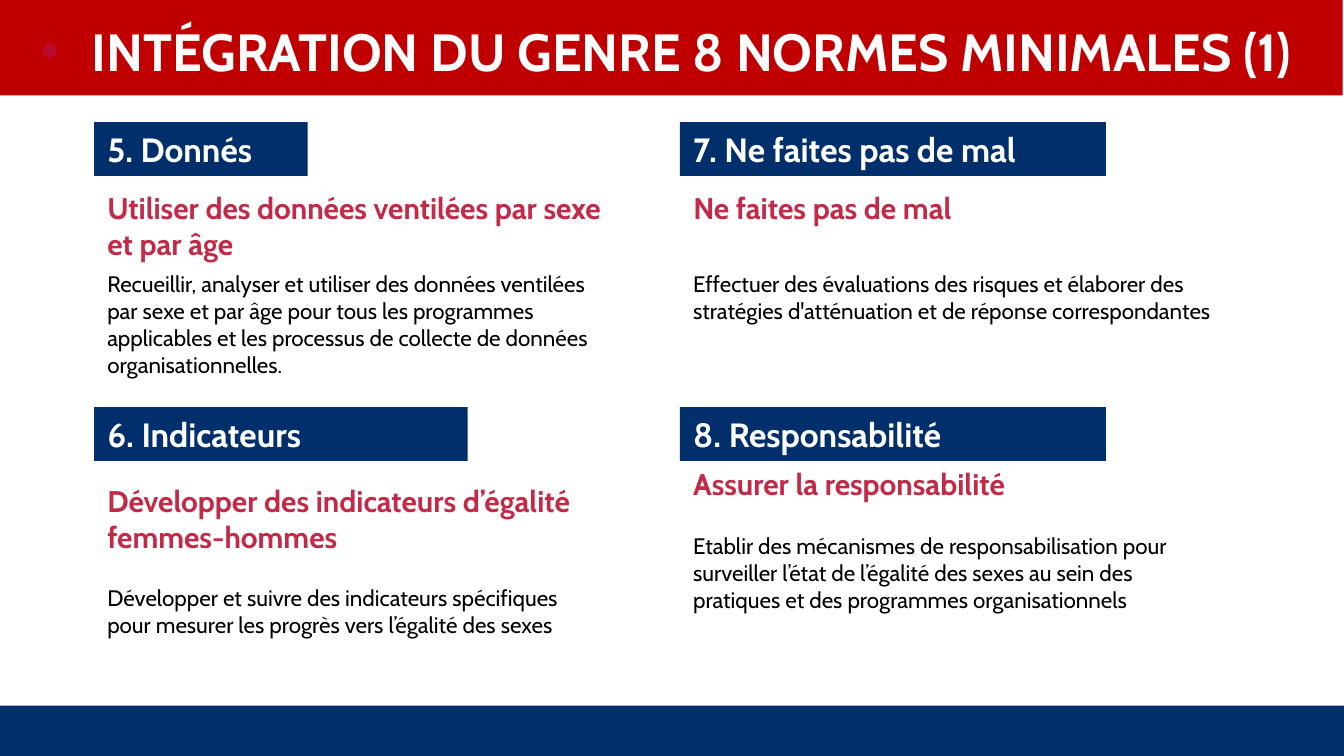
import pptx
import pptx.util
import pptx.dml.color
import pptx.enum.shapes
import pptx.enum.text
import pptx.oxml.ns
from lxml import etree

Inches = pptx.util.Inches
ANCHOR = pptx.enum.text.MSO_ANCHOR
AUTO_SIZE = pptx.enum.text.MSO_AUTO_SIZE

COLORS = {"navy": "002F6C", "red": "C00000", "bullet": "BA0C2F",
          "heading": "C22A48", "white": "FFFFFF", "black": "000000"}

FORMATS = {
    "title": ({"size": 28, "bold": True}, "white"),
    "label": ({"size": 18, "bold": True}, "white"),
    "heading": ({"size": 16, "bold": True}, "heading"),
    "body": ({"size": 12, "bold": False}, "black"),
}

LEFT, RIGHT = 0.7, 5.06
TOP, BOTTOM = 0.91, 3.03
LABEL_HEIGHT = 0.4

# Each box is (offset below the norm's top, width, height).
NORMS = [
    {"at": (LEFT, TOP), "label": "5. Donnés", "label_width": 1.59,
     "heading": "Utiliser des données ventilées par sexe et par âge",
     "heading_box": (0.45, 3.95, 0.64),
     "body": "Recueillir, analyser et utiliser des données ventilées par sexe et par âge "
             "pour tous les programmes applicables et les processus de collecte de données "
             "organisationnelles.",
     "body_box": (1.05, 3.84, 0.91)},
    {"at": (LEFT, BOTTOM), "label": "6. Indicateurs", "label_width": 2.78,
     "heading": "Développer des indicateurs d’égalité femmes-hommes",
     "heading_box": (0.51, 3.75, 0.64),
     "body": "Développer et suivre des indicateurs spécifiques pour mesurer les progrès "
             "vers l’égalité des sexes",
     "body_box": (1.27, 3.84, 0.5)},
    {"at": (RIGHT, TOP), "label": "7. Ne faites pas de mal", "label_width": 3.17,
     "heading": "Ne faites pas de mal",
     "heading_box": (0.45, 3.75, 0.37),
     "body": "Effectuer des évaluations des risques et élaborer des stratégies "
             "d'atténuation et de réponse correspondantes",
     "body_box": (1.05, 4.24, 0.5)},
    {"at": (RIGHT, BOTTOM), "label": "8. Responsabilité", "label_width": 3.17,
     "heading": "Assurer la responsabilité",
     "heading_box": (0.38, 2.7, 0.37),
     "body": "Etablir des mécanismes de responsabilisation pour surveiller l’état de "
             "l’égalité des sexes au sein des pratiques et des programmes organisationnels",
     "body_box": (0.88, 4.03, 0.71)},
]


def set_fill(shape, color):
    shape.fill.solid()
    shape.fill.fore_color.rgb = pptx.dml.color.RGBColor.from_string(COLORS[color])


def add_bar(slide, box, color):
    bar = slide.shapes.add_shape(pptx.enum.shapes.MSO_SHAPE.RECTANGLE, *map(Inches, box))
    bar.shadow.inherit = False
    bar.line.fill.background()
    set_fill(bar, color)
    return bar


def write_text(shape, text, style, anchor=ANCHOR.TOP,
               align=pptx.enum.text.PP_ALIGN.LEFT, auto_size=AUTO_SIZE.SHAPE_TO_FIT_TEXT):
    frame = shape.text_frame
    frame_format = {"word_wrap": True, "auto_size": auto_size, "vertical_anchor": anchor}
    for name, value in frame_format.items():
        setattr(frame, name, value)
    paragraph = frame.paragraphs[0]
    paragraph.alignment = align
    run = paragraph.add_run()
    run.text = text
    values, color = FORMATS[style]
    font_format = {**values, "name": "Cabin", "size": pptx.util.Pt(values["size"])}
    for name, value in font_format.items():
        setattr(run.font, name, value)
    run.font.color.rgb = pptx.dml.color.RGBColor.from_string(COLORS[color])
    return paragraph


def add_bullet(paragraph, color, indent):
    qn = pptx.oxml.ns.qn
    properties = paragraph._p.get_or_add_pPr()
    properties.set("marL", str(Inches(indent)))
    properties.set("indent", str(-Inches(indent)))
    bullet_color = etree.SubElement(properties, qn("a:buClr"))
    etree.SubElement(bullet_color, qn("a:srgbClr"), val=COLORS[color])
    etree.SubElement(properties, qn("a:buFont"), typeface="Arial")
    etree.SubElement(properties, qn("a:buChar"), char="•")


def fill_title(slide, box):
    title = slide.shapes.title
    title.left, title.top, title.width, title.height = map(Inches, box)
    set_fill(title, "red")
    for side in ("left", "top", "right", "bottom"):
        setattr(title.text_frame, f"margin_{side}", Inches(0.1))
    paragraph = write_text(title, "INTÉGRATION DU GENRE 8 NORMES MINIMALES (1) ", "title",
                           ANCHOR.BOTTOM, pptx.enum.text.PP_ALIGN.CENTER, AUTO_SIZE.NONE)
    add_bullet(paragraph, "bullet", 0.38)


def add_norm(slide, norm):
    """Place a norm's label bar, heading and description from its top-left corner."""
    left, top = norm["at"]
    label = add_bar(slide, (left, top, norm["label_width"], LABEL_HEIGHT), "navy")
    write_text(label, norm["label"], "label")
    for part, anchor in (("heading", ANCHOR.MIDDLE), ("body", ANCHOR.TOP)):
        offset, width, height = norm[f"{part}_box"]
        box = slide.shapes.add_textbox(*map(Inches, (left, top + offset, width, height)))
        write_text(box, norm[part], part, anchor)


def main():
    presentation = pptx.Presentation()
    presentation.slide_width = Inches(10)
    presentation.slide_height = presentation.slide_width * 9 // 16
    slide = presentation.slides.add_slide(presentation.slide_layouts[5])
    add_bar(slide, (0, 5.25, 10, 0.38), "navy")
    fill_title(slide, (0, 0, 9.99, 0.71))
    for norm in NORMS:
        add_norm(slide, norm)
    presentation.save("out.pptx")


if __name__ == "__main__":
    main()
